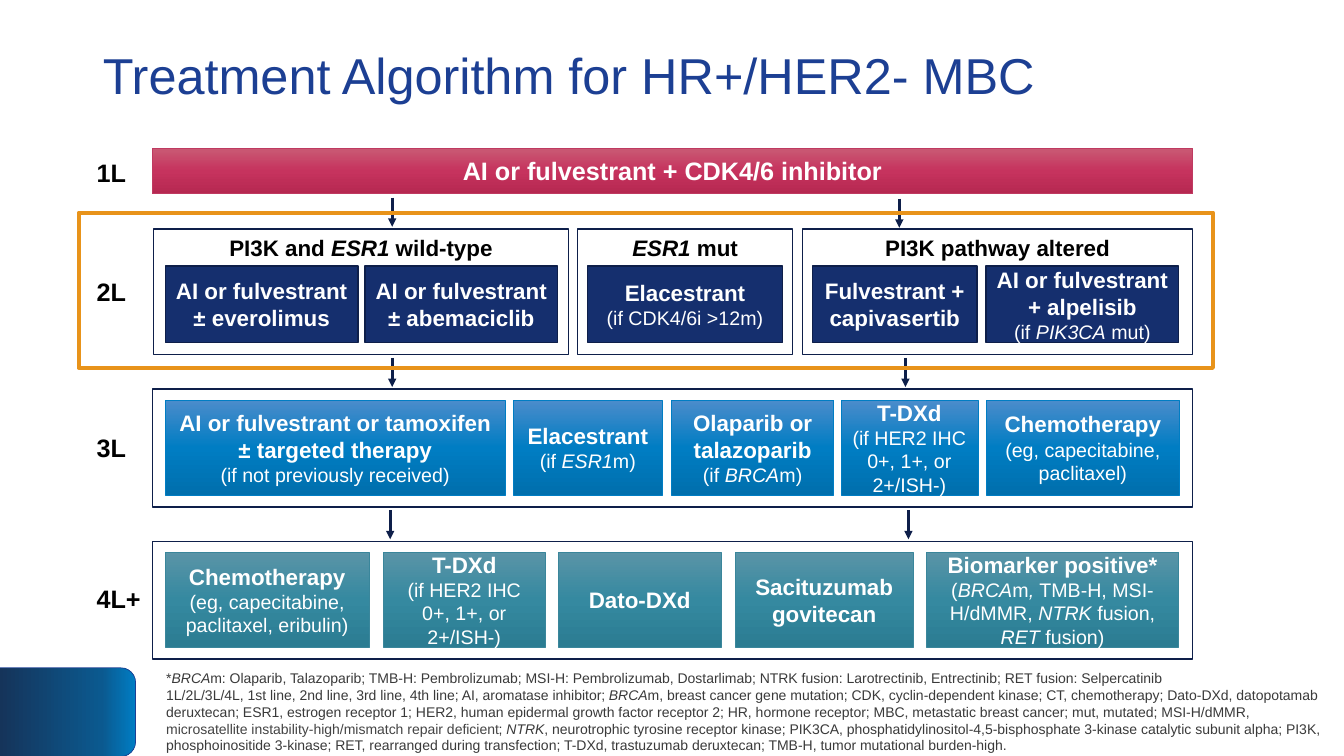
from copy import deepcopy

from pptx import Presentation
from pptx.dml.color import RGBColor
from pptx.enum.shapes import MSO_CONNECTOR, MSO_SHAPE
from pptx.enum.text import MSO_ANCHOR, MSO_AUTO_SIZE, PP_ALIGN
from pptx.oxml import parse_xml
from pptx.oxml.ns import nsdecls, qn
from pptx.util import Inches, Pt

# Content: _..._ is italic, ~...~ is the lighter grey
TITLE = "Treatment Algorithm for HR+/HER2- MBC"
FIRST_LINE = "AI or fulvestrant + CDK4/6 inhibitor"
LINE_LABELS = [("1L", 1.51), ("2L", 2.69), ("3L", 4.24), ("4L+", 5.74)]  # text, top

# Panels: heading, left, top, width, height
PANELS = [
    ("PI3K and _ESR1_ wild-type", 1.52, 2.27, 4.12, 1.25),
    ("_ESR1_ mut", 5.73, 2.27, 2.13, 1.25),
    ("PI3K pathway altered", 7.96, 2.27, 3.87, 1.25),
    ("", 1.51, 3.86, 10.32, 1.17),
    ("", 1.51, 5.37, 10.32, 1.17),
]

# Rows of therapies: style, top, height, then (left, width, bold lines, note)
THERAPY_ROWS = [
    ("second", 2.64, 0.76, [
        (1.64, 1.91, ["AI or fulvestrant ± everolimus"], ""),
        (3.62, 1.91, ["AI or fulvestrant ± abemaciclib"], ""),
        (5.83, 1.93, ["Elacestrant"], "(if CDK4/6i >12m)"),
        (8.06, 1.63, ["Fulvestrant + capivasertib"], ""),
        (9.78, 1.91, ["AI or fulvestrant + alpelisib"], "(if _PIK3CA_ mut)"),
    ]),
    ("third", 3.97, 0.94, [
        (1.64, 3.37, ["AI or fulvestrant or tamoxifen", "± targeted therapy"],
         "(if not previously received)"),
        (5.09, 1.48, ["Elacestrant"], "(if _ESR1_m)"),
        (6.66, 1.61, ["Olaparib or talazoparib"], "(if _BRCA_m)"),
        (8.34, 1.36, ["T-DXd"], "(if HER2 IHC 0+, 1+, or 2+/ISH-)"),
        (9.78, 1.92, ["Chemotherapy"], "(eg, capecitabine, paclitaxel)"),
    ]),
    ("fourth", 5.48, 0.94, [
        (1.64, 2.02, ["Chemotherapy"], "(eg, capecitabine, paclitaxel, eribulin)"),
        (3.8, 1.61, ["T-DXd"], "(if HER2 IHC 0+, 1+, or 2+/ISH-)"),
        (5.54, 1.61, ["Dato-DXd"], ""),
        (7.29, 1.77, ["Sacituzumab govitecan"], ""),
        (9.19, 2.5, ["Biomarker positive*"],
         "(_BRCA_m_,_ TMB-H, MSI-H/dMMR, _NTRK_ fusion, _RET_ fusion)"),
    ]),
]
ARROWS = [(3.89, 1.96), (8.92, 1.97), (3.89, 3.55), (8.98, 3.55), (3.87, 5.06), (9.01, 5.06)]
ARROW_LENGTH = 0.29

FOOTNOTES = [
    "*_BRCA_m: Olaparib, Talazoparib; TMB-H: Pembrolizumab; MSI-H: Pembrolizumab, Dostarlimab; "
    "NTRK fusion: Larotrectinib, Entrectinib; RET fusion: Selpercatinib",
    "1L/2L/3L/4L, 1st line, 2nd line, 3rd line, 4th line; AI, aromatase inhibitor; _BRCA_m, breast "
    "cancer gene mutation; CDK, cyclin-dependent kinase; CT, chemotherapy; Dato-DXd, datopotamab "
    "deruxtecan; ESR1, estrogen receptor 1; HER2, human epidermal growth factor receptor 2; HR, "
    "hormone receptor; MBC, metastatic breast cancer; mut, mutated; MSI-H/dMMR, ~microsatellite "
    "instability-high/mismatch repair deficient~; _NTRK_, neurotrophic tyrosine receptor kinase; "
    "PIK3CA, phosphatidylinositol-4,5-bisphosphate 3-kinase catalytic subunit alpha; PI3K, "
    "phosphoinositide 3-kinase; RET, rearranged during transfection; T-DXd, trastuzumab deruxtecan; "
    "TMB-H, tumor mutational burden-high.",
]

COLORS = {"title": "1C3F93", "navy": "0E1F4A", "orange": "E8931A", "black": "000000",
          "white": "FFFFFF", "footnote": "3A3A3A", "grey": "444444"}
# Style: gradient stops or one solid colour, line colour, line width
STYLES = {
    "corner": ([(0, "007DC3"), (0.25, "0B598F"), (1, "15345A")], "1C3F93", 0.5),
    "first": ([(0, "C95A74"), (0.5, "C6335E"), (1, "B62851")], "BF3A61", 0.5),
    "second": ([(0, "152F6E")], COLORS["navy"], 1),
    "third": ([(0, "4B8CCB"), (0.5, "007DC3"), (1, "006FAD")], "007DC3", 0.5),
    "fourth": ([(0, "5A94A7"), (0.5, "3589A0"), (1, "2B7C92")], "3A869B", 0.5),
    "panel": ([], COLORS["navy"], 1),
    "frame": ([], COLORS["orange"], 3),
}

presentation = Presentation()
presentation.slide_width, presentation.slide_height = Inches(13.33), Inches(7.5)
slide = presentation.slides.add_slide(presentation.slide_layouts[5])


def add_run(paragraph, text, color, **formats):
    run = paragraph.add_run()
    run.text = text
    for name, value in {"name": "Arial", **formats}.items():
        setattr(run.font, name, value)
    run.font.color.rgb = RGBColor.from_string(COLORS[color])


def write(shape, lines, color, align=PP_ALIGN.CENTER, anchor=MSO_ANCHOR.MIDDLE, wrap=True):
    """Write lines of (marked text, size, bold) into a shape."""
    frame = shape.text_frame
    for name, value in {"auto_size": MSO_AUTO_SIZE.NONE, "word_wrap": wrap,
                        "vertical_anchor": anchor}.items():
        setattr(frame, name, value)
    for index, (text, size, bold) in enumerate(lines):
        paragraph = frame.add_paragraph() if index else frame.paragraphs[0]
        paragraph.alignment = align
        for grey, part in enumerate(text.split("~")):
            for italic, piece in enumerate(part.split("_")):
                if piece:
                    add_run(paragraph, piece, "grey" if grey % 2 else color,
                            size=Pt(size), bold=bold, italic=bool(italic % 2))


def add_box(style, left, top, width, height, kind=MSO_SHAPE.RECTANGLE):
    stops, line_color, line_width = STYLES[style]
    shape = slide.shapes.add_shape(kind, Inches(left), Inches(top), Inches(width), Inches(height))
    shape.shadow.inherit = False
    shape.line.color.rgb = RGBColor.from_string(line_color)
    shape.line.width = Pt(line_width)
    if not stops:
        shape.fill.background()
    elif len(stops) == 1:
        shape.fill.solid()
        shape.fill.fore_color.rgb = RGBColor.from_string(stops[0][1])
    else:
        shape.fill.gradient()
        shape.fill.gradient_angle = 270
        stop_list = shape._element.spPr.find(".//" + qn("a:gsLst"))
        stop_list.append(deepcopy(stop_list[0]))
        for stop, (position, color) in zip(shape.fill.gradient_stops, stops):
            stop.position = position
            stop.color.rgb = RGBColor.from_string(color)
    return shape


def add_text_box(left, top, width, height):
    return slide.shapes.add_textbox(Inches(left), Inches(top), Inches(width), Inches(height))


def add_arrow(x, top):
    arrow = slide.shapes.add_connector(MSO_CONNECTOR.STRAIGHT, Inches(x), Inches(top),
                                       Inches(x), Inches(top + ARROW_LENGTH))
    arrow.line.color.rgb = RGBColor.from_string(COLORS["navy"])
    arrow.line.width = Pt(2)
    arrow.line._get_or_add_ln().append(parse_xml(f'<a:tailEnd {nsdecls("a")} type="triangle"/>'))
    arrow._element.spPr.append(parse_xml(f'<a:effectLst {nsdecls("a")}/>'))


# Corner ornament, title and footnotes
corner = add_box("corner", 0.23, 6.39, 0.88, 1.35, MSO_SHAPE.ROUND_2_SAME_RECTANGLE)
corner.rotation = 90

title = slide.shapes.title
for name, value in {"left": 0.92, "top": 0.22, "width": 11.5, "height": 1.12}.items():
    setattr(title, name, Inches(value))
write(title, [(TITLE, 36, False)], "title", PP_ALIGN.LEFT)
title.text_frame.paragraphs[0].line_spacing = 0.9

write(add_text_box(1.55, 6.62, 11.65, 0.88), [(note, 10, False) for note in FOOTNOTES],
      "footnote", PP_ALIGN.LEFT)

# First-line bar and line labels
write(add_box("first", 1.51, 1.47, 10.32, 0.45), [(FIRST_LINE, 18, True)], "white")
for label, top in LINE_LABELS:
    write(add_text_box(0.86, top, 0.5, 0.4), [(label, 18, True)], "black",
          PP_ALIGN.LEFT, MSO_ANCHOR.TOP, wrap=False)

# Arrows between lines of therapy
for x, top in ARROWS:
    add_arrow(x, top)

# Panels and the therapies inside them
for heading, *place in PANELS:
    panel = add_box("panel", *place)
    if heading:
        write(panel, [(heading, 16, True)], "black", anchor=MSO_ANCHOR.TOP)

for style, top, height, therapies in THERAPY_ROWS:
    for left, width, names, note in therapies:
        lines = [(name, 16, True) for name in names] + ([(note, 14, False)] if note else [])
        write(add_box(style, left, top, width, height), lines, "white")

# Highlight around the second line
add_box("frame", 0.78, 2.11, 11.25, 1.54)

presentation.save("out.pptx")
